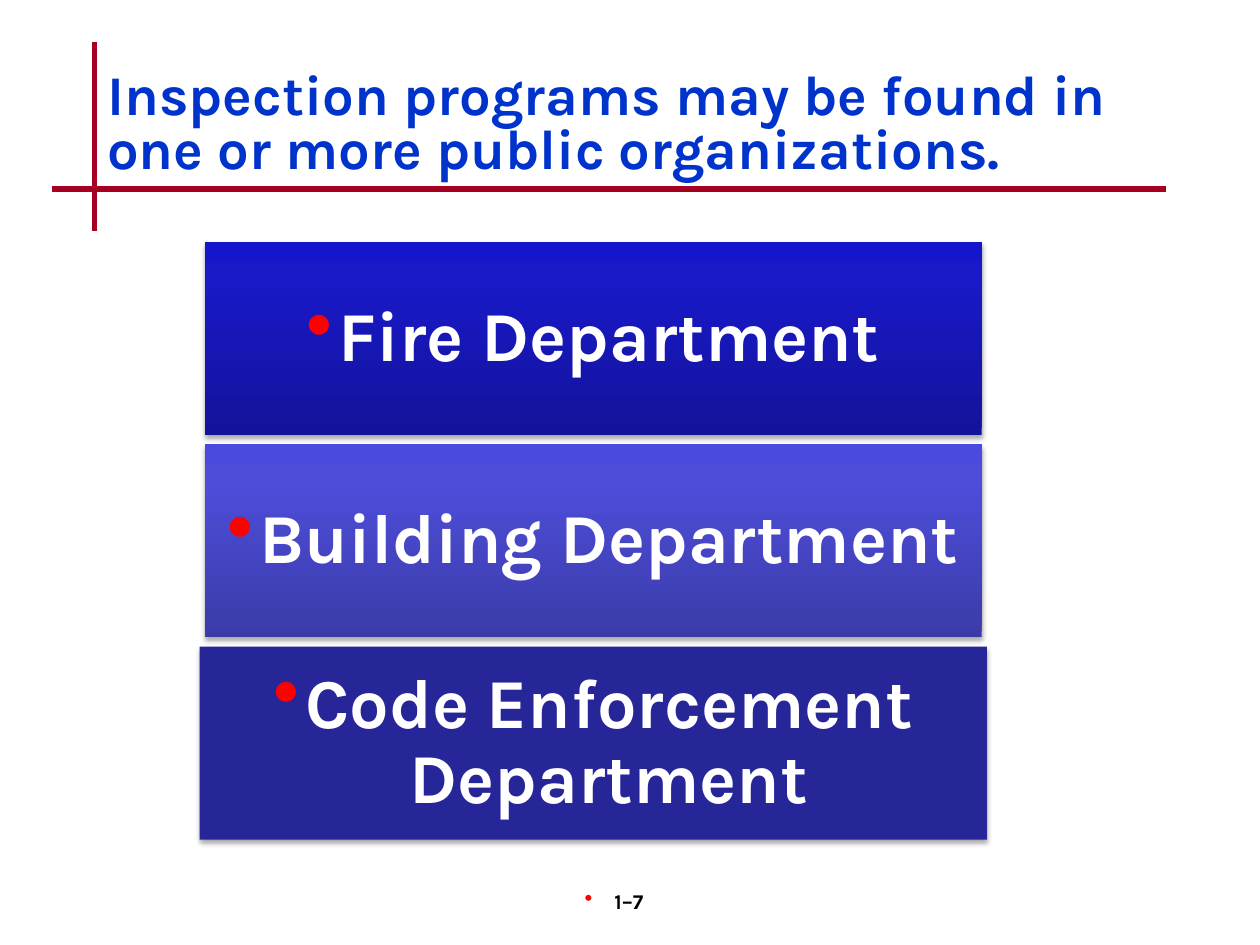
from lxml import etree
from pptx import Presentation
from pptx.dml.color import RGBColor
from pptx.enum.shapes import MSO_CONNECTOR, MSO_SHAPE
from pptx.enum.text import MSO_ANCHOR, PP_ALIGN
from pptx.oxml import parse_xml
from pptx.oxml.ns import nsdecls, qn
from pptx.util import Pt

STRAIGHT = MSO_CONNECTOR.STRAIGHT
RECTANGLE = MSO_SHAPE.RECTANGLE
TOP, MIDDLE = MSO_ANCHOR.TOP, MSO_ANCHOR.MIDDLE
LEFT, CENTER = PP_ALIGN.LEFT, PP_ALIGN.CENTER

COLORS = {"rule": "A50021", "title": "0033CC", "bullet": "FF0000",
          "label": "FFFFFF", "number": "000000", "shadow": "000000"}
FONT = "Karla"
TITLE = "Inspection programs may be found in one or more public organizations."
PAGE_NUMBER = "1–7"
RULES = [(54, 24, 54, 132), (30, 108, 666, 108)]
DEPARTMENTS = [
    ("Fire Department", 444, [(0, "13139A"), (80, "1919C8"), (100, "1515CC")]),
    ("Building Department", 444, [(0, "3B3BA8"), (80, "4D4DDA"), (100, "4A4ADE")]),
    ("Code Enforcement Department", 450, [(0, "262699")]),
]
BAND_CENTER, BAND_TOP, BAND_HEIGHT, BAND_STEP = 339, 138.25, 110.25, 115.65


def set_text(frame, text, size, color, alignment, anchor, spacing=1, inset=None, bullet=None):
    frame.word_wrap = True
    frame.vertical_anchor = anchor
    if inset is not None:
        for side in ("left", "top", "right", "bottom"):
            setattr(frame, f"margin_{side}", Pt(inset))
    frame.text = text
    paragraph = frame.paragraphs[0]
    if bullet:
        add_bullet(paragraph, *bullet)
    paragraph.alignment = alignment
    paragraph.line_spacing = spacing
    font = paragraph.runs[0].font
    for name, value in {"name": FONT, "size": Pt(size), "bold": True}.items():
        setattr(font, name, value)
    font.color.rgb = RGBColor.from_string(COLORS[color])


def add_bullet(paragraph, margin, indent):
    properties = paragraph._p.get_or_add_pPr()
    properties.set("marL", str(Pt(margin)))
    properties.set("indent", str(Pt(indent)))
    color = etree.SubElement(properties, qn("a:buClr"))
    etree.SubElement(color, qn("a:srgbClr"), val=COLORS["bullet"])
    etree.SubElement(properties, qn("a:buSzPct"), val="110000")
    etree.SubElement(properties, qn("a:buChar"), char="•")


def fill_band(shape, stops):
    if len(stops) == 1:
        shape.fill.solid()
        shape.fill.fore_color.rgb = RGBColor.from_string(stops[0][1])
        return
    shape.fill.gradient()
    gradient = shape._element.spPr.find(qn("a:gradFill"))
    stop_list = "".join(f'<a:gs pos="{position * 1000}"><a:srgbClr val="{color}"/></a:gs>'
                        for position, color in stops)
    gradient.getparent().replace(gradient, parse_xml(
        f'<a:gradFill {nsdecls("a")} rotWithShape="1"><a:gsLst>{stop_list}</a:gsLst>'
        '<a:lin ang="16200000" scaled="0"/></a:gradFill>'))


def add_shadow(shape):
    shape.shadow.inherit = False
    shape._element.spPr.find(qn("a:effectLst")).append(parse_xml(
        f'<a:outerShdw {nsdecls("a")} blurRad="{Pt(3.1)}" dist="{Pt(1.8)}" dir="5400000" '
        f'rotWithShape="0"><a:srgbClr val="{COLORS["shadow"]}"><a:alpha val="35000"/>'
        '</a:srgbClr></a:outerShdw>'))


def main():
    presentation = Presentation()
    presentation.slide_width, presentation.slide_height = Pt(720), Pt(540)
    slide = presentation.slides.add_slide(presentation.slide_layouts[5])
    shapes = slide.shapes

    for ends in RULES:
        rule = shapes.add_connector(STRAIGHT, *map(Pt, ends))
        rule.line.color.rgb = RGBColor.from_string(COLORS["rule"])
        rule.line.width = Pt(3)
        etree.SubElement(rule._element.spPr, qn("a:effectLst"))

    title = shapes.title
    title.left, title.top, title.width, title.height = map(Pt, (54, 36, 612, 72))
    set_text(title.text_frame, TITLE, 32, "title", LEFT, MIDDLE, spacing=0.8)

    number = shapes.add_textbox(*map(Pt, (282, 504, 150, 36)))
    set_text(number.text_frame, PAGE_NUMBER, 12, "number", CENTER, TOP, bullet=(4.5, -17))

    for index, (name, width, stops) in enumerate(DEPARTMENTS):
        band = shapes.add_shape(RECTANGLE, Pt(BAND_CENTER - width / 2),
                                Pt(BAND_TOP + index * BAND_STEP), Pt(width), Pt(BAND_HEIGHT))
        fill_band(band, stops)
        band.line.fill.background()
        add_shadow(band)
        set_text(band.text_frame, name, 40, "label", CENTER, MIDDLE,
                 spacing=0.9, inset=8, bullet=(18, -18))

    presentation.save("out.pptx")


if __name__ == "__main__":
    main()
